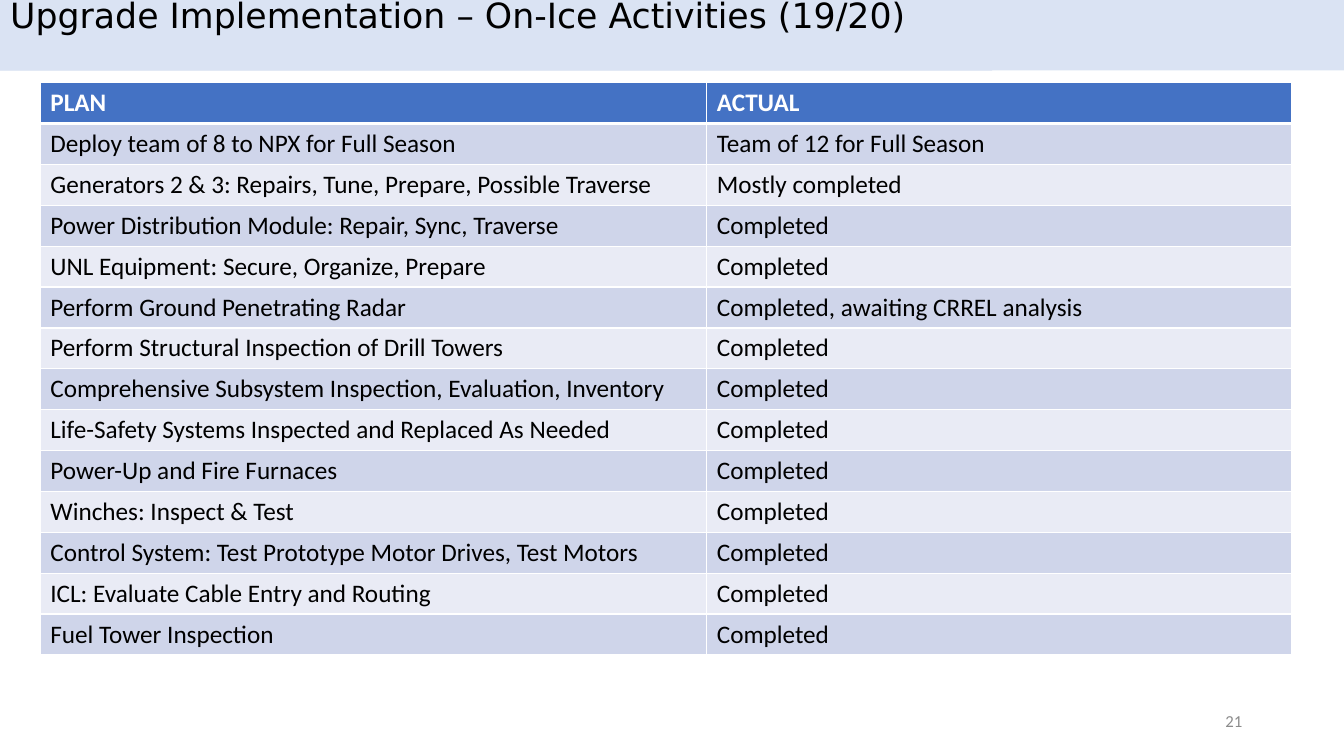
from lxml.etree import SubElement as Sub
from pptx import Presentation
from pptx.dml.color import RGBColor as Rgb
from pptx.enum.shapes import MSO_SHAPE as Kind
from pptx.enum.text import MSO_ANCHOR as Anchor, MSO_AUTO_SIZE as Auto, PP_ALIGN as Align
from pptx.oxml.ns import qn
from pptx.util import Pt

PX = 9144
HUES = {
    "band": "DAE3F3",
    "head": "4472C4",
    "odd": "CFD5EA",
    "even": "E9EBF5",
    "white": "FFFFFF",
    "black": "000000",
    "grey": "8C8C8C",
}
DONE = "Completed"
ROWS = [
    ("PLAN", "ACTUAL"),
    ("Deploy team of 8 to NPX for Full Season", "Team of 12 for Full Season"),
    ("Generators 2 & 3: Repairs, Tune, Prepare, Possible Traverse", "Mostly completed"),
    ("Power Distribution Module: Repair, Sync, Traverse", DONE),
    ("UNL Equipment: Secure, Organize, Prepare", DONE),
    ("Perform Ground Penetrating Radar", "Completed, awaiting CRREL analysis"),
    ("Perform Structural Inspection of Drill Towers", DONE),
    ("Comprehensive Subsystem Inspection, Evaluation, Inventory", DONE),
    ("Life-Safety Systems Inspected and Replaced As Needed", DONE),
    ("Power-Up and Fire Furnaces", DONE),
    ("Winches: Inspect & Test", DONE),
    ("Control System: Test Prototype Motor Drives, Test Motors", DONE),
    ("ICL: Evaluate Cable Entry and Routing", DONE),
    ("Fuel Tower Inspection", DONE),
]


class Page:
    def __init__(self, deck):
        self.slide = deck.slides.add_slide(deck.slide_layouts[5])
        self.shapes = self.slide.shapes
        self.font = "Calibri"

    def box(self, *px):
        return [n * PX for n in px]

    def paint(self, item, hue):
        item.fill.solid()
        item.fill.fore_color.rgb = Rgb.from_string(HUES[hue])

    def label(self, para, text, size, hue, bold=False, face=None):
        run = para.add_run()
        run.text = text
        font = run.font
        font.name = face or self.font
        font.size = Pt(size)
        font.bold = bold
        font.color.rgb = Rgb.from_string(HUES[hue])

    def band(self, *px):
        band = self.shapes.add_shape(Kind.RECTANGLE, *self.box(*px))
        band.shadow.inherit = False
        band.line.fill.background()
        self.paint(band, "band")
        self.shapes.title.element.addprevious(band.element)

    def title(self, text, *px):
        title = self.shapes.title
        title.left, title.top, title.width, title.height = self.box(*px)
        self.paint(title, "band")
        frame = title.text_frame
        frame.auto_size = Auto.NONE
        frame.word_wrap = True
        frame.vertical_anchor = Anchor.TOP
        para = frame.paragraphs[0]
        para.alignment = Align.LEFT
        para.line_spacing = 0.7
        self.label(para, text, 24.8, "black", face="DejaVu Sans")

    def number(self, text, *px):
        frame = self.shapes.add_textbox(*self.box(*px)).text_frame
        frame.word_wrap = True
        frame.vertical_anchor = Anchor.MIDDLE
        para = frame.paragraphs[0]
        para.alignment = Align.RIGHT
        self.label(para, text, 12, "grey")

    def edge(self, cell, side, width):
        line = Sub(cell._tc.get_or_add_tcPr(), qn("a:ln" + side), w=str(Pt(width)))
        fill = Sub(line, qn("a:solidFill"))
        Sub(fill, qn("a:srgbClr"), val=HUES["white"])

    def table(self, rows, cols, *px):
        grid = self.shapes.add_table(len(rows), len(cols), *self.box(*px)).table
        for col, width in zip(grid.columns, cols):
            col.width = width * PX
        for r, row in enumerate(rows):
            head = r == 0
            hue = "head" if head else ("even", "odd")[r % 2]
            for c, text in enumerate(row):
                cell = grid.cell(r, c)
                for side in "LRTB":
                    thick = (r, side) in ((0, "B"), (1, "T"))
                    self.edge(cell, side, 3 if thick else 1)
                self.paint(cell, hue)
                para = cell.text_frame.paragraphs[0]
                self.label(para, text, 18, "white" if head else "black", head)


def main():
    deck = Presentation()
    deck.slide_width, deck.slide_height = 1333 * PX, 750 * PX
    page = Page(deck)
    page.band(0, 0, 1333, 70)
    page.title("Upgrade Implementation – On-Ice Activities (19/20)", 0, 0, 984, 70)
    page.number("21", 942, 695, 300, 40)
    page.table(ROWS, (661, 580), 40, 82, 1241, 568)
    deck.save("out.pptx")


if __name__ == "__main__":
    main()
